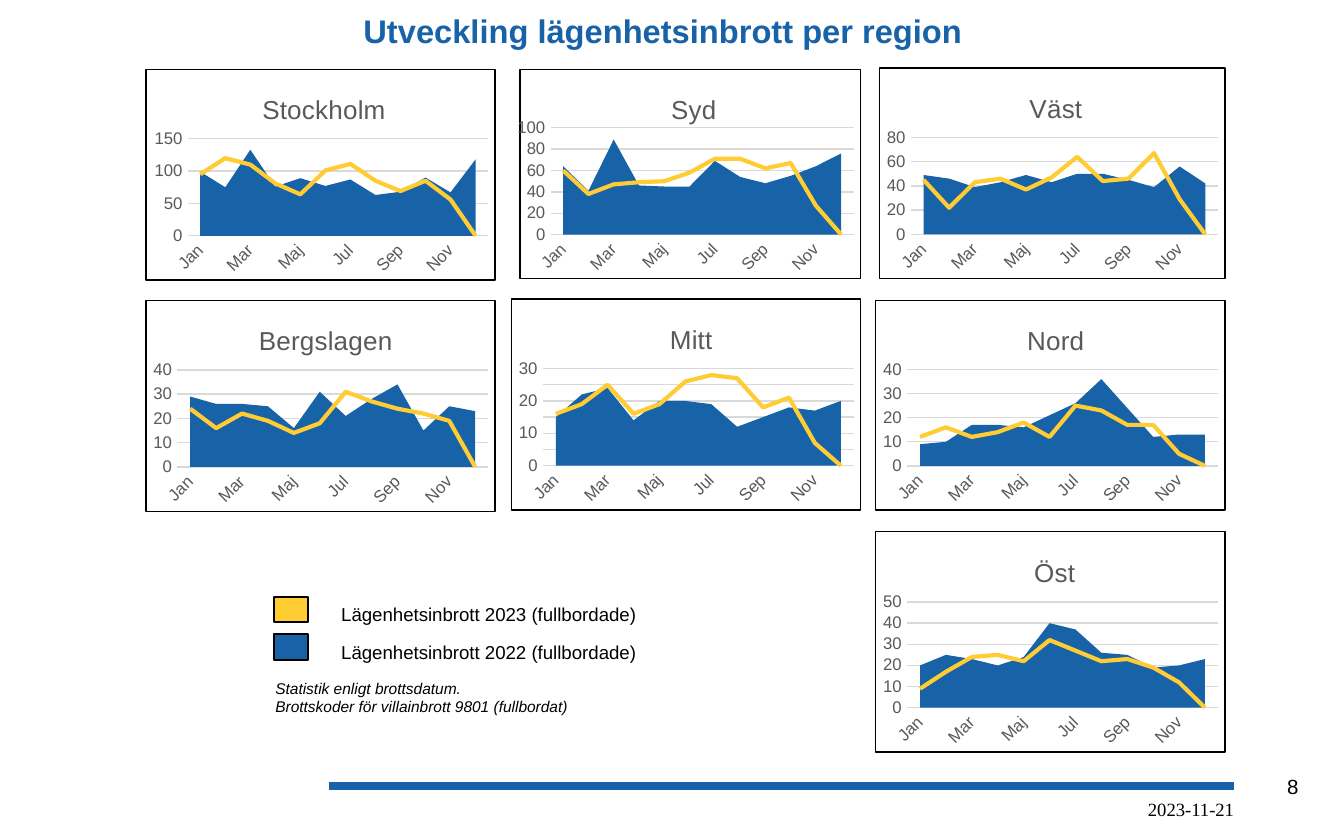
from dataclasses import dataclass

from lxml.etree import SubElement
from pptx import Presentation
from pptx.chart.chart import Chart
from pptx.chart.data import CategoryChartData
from pptx.dml.color import RGBColor
from pptx.enum.chart import XL_CHART_TYPE, XL_MARKER_STYLE, XL_TICK_MARK
from pptx.enum.shapes import MSO_CONNECTOR, MSO_SHAPE
from pptx.enum.text import PP_ALIGN
from pptx.oxml import parse_xml
from pptx.oxml.ns import nsdecls, qn
from pptx.slide import Slide
from pptx.util import Inches, Pt

BLUE = RGBColor(0x18, 0x62, 0xA8)
RULE_BLUE = RGBColor(0x18, 0x62, 0xAB)
YELLOW = RGBColor(0xFF, 0xCC, 0x33)
BLACK = RGBColor(0, 0, 0)
GRAY = RGBColor(0x59, 0x59, 0x59)
GRID = RGBColor(0xD9, 0xD9, 0xD9)
MONTHS = ["Jan", "Feb", "Mar", "Apr", "Maj", "Jun",
          "Jul", "Aug", "Sep", "Okt", "Nov", "Dec"]


@dataclass
class Region:
    name: str
    box: tuple[float, float, float, float]
    title_x: float  # fraction of the chart width
    axis_max: int
    axis_step: int
    y2022: list[int]
    y2023: list[int]  # January to November
    plot_x: float = 0.09
    plot_y: float = 0.33
    plot_h: float = 0.46


@dataclass
class Label:
    lines: list[str]
    box: tuple[float, float, float, float]
    size: float
    font: str = "Arial"
    color: RGBColor = BLACK
    align: PP_ALIGN = PP_ALIGN.LEFT
    bold: bool = False
    italic: bool = False
    wrap: bool = True


REGIONS = [
    Region("Stockholm", (1.08, 0.51, 2.61, 1.58), 0.32, 150, 50,
           [99, 75, 133, 76, 89, 77, 87, 63, 68, 90, 67, 118],
           [95, 120, 110, 81, 64, 101, 111, 85, 69, 85, 56], plot_x=0.12),
    Region("Syd", (3.85, 0.51, 2.56, 1.57), 0.43, 100, 20,
           [64, 41, 89, 46, 45, 45, 69, 54, 48, 55, 64, 76],
           [60, 38, 47, 49, 50, 58, 71, 71, 62, 67, 27], plot_y=0.28, plot_h=0.51),
    Region("Väst", (6.54, 0.5, 2.58, 1.58), 0.42, 80, 20,
           [49, 46, 39, 43, 49, 43, 50, 50, 45, 39, 56, 42],
           [45, 22, 43, 46, 37, 47, 64, 44, 46, 67, 29]),
    Region("Bergslagen", (1.08, 2.23, 2.61, 1.58), 0.31, 40, 10,
           [29, 26, 26, 25, 16, 31, 21, 28, 34, 15, 25, 23],
           [24, 16, 22, 19, 14, 18, 31, 27, 24, 22, 19]),
    Region("Mitt", (3.8, 2.22, 2.61, 1.58), 0.44, 30, 5,
           [15, 22, 24, 14, 20, 20, 19, 12, 15, 18, 17, 20],
           [16, 19, 25, 16, 19, 26, 28, 27, 18, 21, 7]),
    Region("Nord", (6.51, 2.23, 2.61, 1.57), 0.42, 40, 10,
           [9, 10, 17, 17, 16, 21, 26, 36, 24, 12, 13, 13],
           [12, 16, 12, 14, 18, 12, 25, 23, 17, 17, 5]),
    Region("Öst", (6.51, 3.95, 2.61, 1.65), 0.44, 50, 10,
           [20, 25, 23, 20, 24, 40, 37, 26, 25, 19, 20, 23],
           [9, 17, 24, 25, 22, 32, 27, 22, 23, 19, 12], plot_y=0.32, plot_h=0.48),
]

LABELS = [
    Label(["8"], (9.27, 5.71, 0.49, 0.27), 11, align=PP_ALIGN.RIGHT),
    Label(["2023-11-21"], (3.12, 5.89, 6.16, 0.26), 10, "Times New Roman",
          align=PP_ALIGN.RIGHT),
    Label(["Utveckling lägenhetsinbrott per region"], (1.26, 0.03, 7.35, 0.4), 17.5,
          color=BLUE, align=PP_ALIGN.CENTER, bold=True),
    Label(["Statistik enligt brottsdatum.",
           "Brottskoder för villainbrott 9801 (fullbordat)"],
          (1.95, 5, 2.41, 0.38), 8.3, italic=True, wrap=False),
]


def add_label(s: Slide, label: Label) -> None:
    tf = s.shapes.add_textbox(*map(Inches, label.box)).text_frame
    tf.word_wrap = label.wrap
    for i, line in enumerate(label.lines):
        p = tf.paragraphs[0] if i == 0 else tf.add_paragraph()
        p.text = line
        p.alignment = label.align
        p.font.name = label.font
        p.font.size = Pt(label.size)
        p.font.bold = label.bold
        p.font.italic = label.italic
        p.font.color.rgb = label.color


def add_key(s: Slide, top: float, year: int, color: RGBColor) -> None:
    sp = s.shapes.add_shape(MSO_SHAPE.RECTANGLE, Inches(2.04), Inches(top),
                            Inches(0.25), Inches(0.19))
    sp.shadow.inherit = False
    sp.fill.solid()
    sp.fill.fore_color.rgb = color
    sp.line.color.rgb = BLACK
    sp.line.width = Pt(1)
    add_label(s, Label([f"Lägenhetsinbrott {year} (fullbordade)"],
                       (2.44, top, 2.41, 0.27), 10, wrap=False))


def manual_layout(**places: float):
    values = "".join(f'<c:{k} val="{v:.2f}"/>' for k, v in places.items())
    target = '<c:layoutTarget val="inner"/>' if "w" in places else ""
    return parse_xml(
        f'<c:layout {nsdecls("c")}><c:manualLayout>{target}<c:xMode val="edge"/>'
        f'<c:yMode val="edge"/>{values}</c:manualLayout></c:layout>')


def set_layouts(chart: Chart, region: Region) -> None:
    title = chart.element.find(".//" + qn("c:title"))
    plot_area = chart.element.find(".//" + qn("c:plotArea"))
    for parent in (title, plot_area):
        for old in parent.findall(qn("c:layout")):
            parent.remove(old)
    title.find(qn("c:tx")).addnext(manual_layout(x=region.title_x, y=0.09))
    plot_area.insert(0, manual_layout(x=region.plot_x, y=region.plot_y,
                                      w=0.98 - region.plot_x, h=region.plot_h))


def second_series_as_line(chart: Chart) -> None:
    area = chart.element.find(".//" + qn("c:areaChart"))
    line = parse_xml(f'<c:lineChart {nsdecls("c")}><c:grouping val="standard"/>'
                     '<c:varyColors val="0"/></c:lineChart>')
    line.append(area.findall(qn("c:ser"))[1])
    SubElement(line, qn("c:marker")).set("val", "1")
    for ax_id in area.findall(qn("c:axId")):
        SubElement(line, qn("c:axId")).set("val", ax_id.get("val"))
    area.addnext(line)


def style_axes(chart: Chart, region: Region) -> None:
    cat, val = chart.category_axis, chart.value_axis
    for axis in (cat, val):
        axis.major_tick_mark = axis.minor_tick_mark = XL_TICK_MARK.NONE
        font = axis.tick_labels.font
        font.name, font.size, font.color.rgb = "Arial", Pt(9), GRAY
    cat.has_major_gridlines = False
    val.has_major_gridlines = True
    val.minimum_scale, val.maximum_scale = 0, region.axis_max
    val.major_unit = region.axis_step
    val.format.line.fill.background()
    for line in (cat.format.line, val.major_gridlines.format.line):
        line.color.rgb = GRID
        line.width = Pt(0.75)
    # Slanted month names, every second one, centred between ticks
    cat_ax = chart.element.find(".//" + qn("c:catAx"))
    cat_ax.find(qn("c:txPr")).find(qn("a:bodyPr")).set("rot", "-2700000")
    cat_ax.find(qn("c:noMultiLvlLbl")).addprevious(
        parse_xml(f'<c:tickLblSkip {nsdecls("c")} val="2"/>'))
    chart.element.find(".//" + qn("c:crossBetween")).set("val", "between")


def add_region_chart(s: Slide, region: Region) -> None:
    data = CategoryChartData()
    data.categories = MONTHS
    data.add_series("Series 1", region.y2022)
    data.add_series("Series 2", region.y2023 + [None])
    chart = s.shapes.add_chart(XL_CHART_TYPE.AREA, *map(Inches, region.box), data).chart
    chart.has_legend = False
    chart.font.name, chart.font.size, chart.font.color.rgb = "Arial", Pt(10), BLACK
    chart.has_title = True
    p = chart.chart_title.text_frame.paragraphs[0]
    p.text = region.name
    p.font.name, p.font.size, p.font.bold = "Arial", Pt(14), False
    p.font.color.rgb = GRAY
    style_axes(chart, region)
    set_layouts(chart, region)
    second_series_as_line(chart)
    # Series colours
    area_plot, line_plot = chart.plots
    area_plot.vary_by_categories = False
    fill = area_plot.series[0].format.fill
    fill.solid()
    fill.fore_color.rgb = BLUE
    ser = line_plot.series[0]
    ser.smooth = False
    ser.marker.style = XL_MARKER_STYLE.NONE
    ser.format.line.color.rgb = YELLOW
    ser.format.line.width = Pt(2.25)
    # Frame
    chart.element.find(qn("c:chart")).addnext(parse_xml(
        f'<c:spPr {nsdecls("c", "a")}><a:solidFill><a:srgbClr val="FFFFFF"/></a:solidFill>'
        f'<a:ln w="{Pt(0.75)}"><a:solidFill><a:srgbClr val="{BLACK}"/></a:solidFill></a:ln>'
        '</c:spPr>'))


def main() -> None:
    prs = Presentation()
    prs.slide_width, prs.slide_height = Inches(10), Inches(6.25)
    s = prs.slides.add_slide(prs.slide_layouts[6])
    # Footer rule
    rule = s.shapes.add_connector(MSO_CONNECTOR.STRAIGHT, Inches(2.45), Inches(5.85),
                                  Inches(9.18), Inches(5.85))
    rule.line.color.rgb = RULE_BLUE
    rule.line.width = Pt(4.5)
    SubElement(rule.element.spPr, qn("a:effectLst"))
    # Texts, key and charts
    for label in LABELS:
        add_label(s, label)
    add_key(s, 4.44, 2023, YELLOW)
    add_key(s, 4.72, 2022, BLUE)
    for region in REGIONS:
        add_region_chart(s, region)
    prs.save("out.pptx")


if __name__ == "__main__":
    main()
